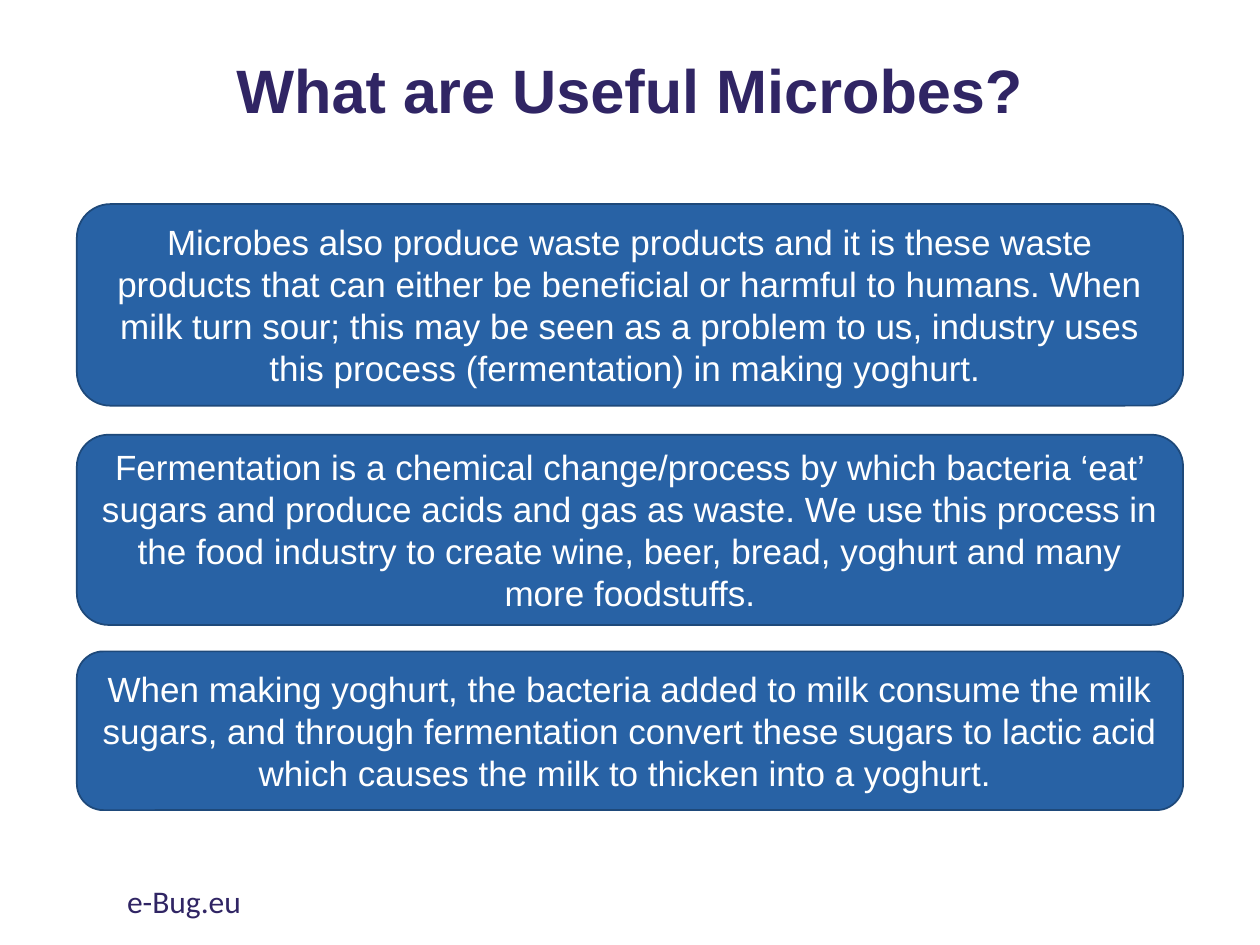
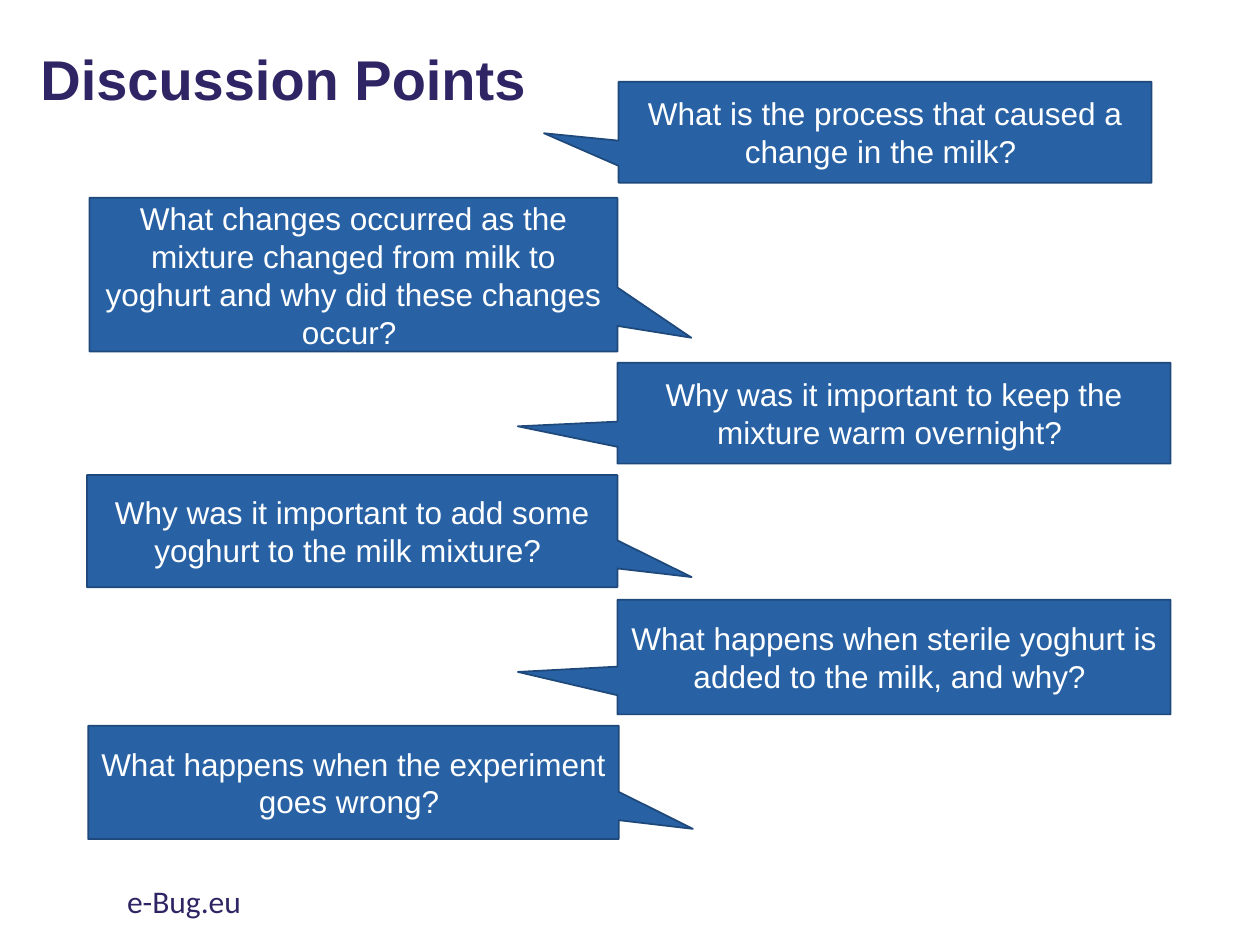
from pptx import Presentation
from pptx.dml.color import RGBColor
from pptx.enum.shapes import MSO_SHAPE
from pptx.enum.text import MSO_ANCHOR, MSO_AUTO_SIZE, PP_ALIGN
from pptx.util import Inches, Pt

NAVY, BLUE, EDGE, WHITE = "302564", "2862A5", "1E497A", "FFFFFF"


def colour(fmt, value):
    fmt.rgb = RGBColor.from_string(value)


def write(shape, text, size, value, align, anchor=MSO_ANCHOR.MIDDLE, font="Arial", bold=False):
    frame = shape.text_frame
    frame.word_wrap = True
    frame.auto_size = MSO_AUTO_SIZE.NONE
    frame.vertical_anchor = anchor
    frame.text = text
    paragraph = frame.paragraphs[0]
    paragraph.alignment = align
    paragraph.font.name = font
    paragraph.font.size = Pt(size)
    paragraph.font.bold = bold
    colour(paragraph.font.color, value)
    return paragraph


facts = [
    (1.62, 1.6, "Microbes also produce waste products and it is these waste products that can either be "
     "beneficial or harmful to humans. When milk turn sour; this may be seen as a problem to us, "
     "industry uses this process (fermentation) in making yoghurt. "),
    (3.45, 1.51, "Fermentation is a chemical change/process by which bacteria ‘eat’ sugars and produce "
     "acids and gas as waste. We use this process in the food industry to create wine, beer, bread, "
     "yoghurt and many more foodstuffs."),
    (5.17, 1.26, "When making yoghurt, the bacteria added to milk consume the milk sugars, and through "
     "fermentation convert these sugars to lactic acid which causes the milk to thicken into a yoghurt. "),
]

RIGHT_TAIL, LEFT_TAIL, FIRST_TAIL = (0.64, 0.41), (-0.68, 0.13), (-0.64, 0.01)
questions = [
    ((4.91, 0.65, 4.23, 0.8), FIRST_TAIL, "What is the process that caused a change in the milk? "),
    ((0.71, 1.57, 4.19, 1.22), RIGHT_TAIL, "What changes occurred as the mixture changed from milk "
     "to yoghurt and why did these changes occur? "),
    ((4.9, 2.88, 4.39, 0.8), LEFT_TAIL, "Why was it important to keep the mixture warm overnight? "),
    ((0.69, 3.77, 4.21, 0.89), RIGHT_TAIL, "Why was it important to add some yoghurt to the milk mixture? "),
    ((4.9, 4.76, 4.39, 0.91), LEFT_TAIL, "What happens when sterile yoghurt is added to the milk, and why? "),
    ((0.7, 5.76, 4.21, 0.9), RIGHT_TAIL, "What happens when the experiment goes wrong? "),
]

fact_panels = [
    (MSO_SHAPE.ROUNDED_RECTANGLE, (0.61, top, 8.78, height), (), text) for top, height, text in facts
]
question_panels = [(MSO_SHAPE.RECTANGULAR_CALLOUT, *question) for question in questions]

pages = [
    ("What are Useful Microbes?", (0.69, 0.29, 8.62, 0.91), 35, PP_ALIGN.CENTER, fact_panels, 20),
    ("Discussion Points", (0.22, -0.07, 4.23, 1.45), 32, PP_ALIGN.LEFT, question_panels, 18),
]

deck = Presentation()
deck.slide_width, deck.slide_height = Inches(10), Inches(7.5)

for heading, heading_box, heading_size, heading_align, panels, panel_size in pages:
    slide = deck.slides.add_slide(deck.slide_layouts[5])
    title = slide.shapes.title
    title.left, title.top, title.width, title.height = map(Inches, heading_box)
    write(title, heading, heading_size, NAVY, heading_align, bold=True).line_spacing = 0.9

    for kind, box, tail, text in panels:
        panel = slide.shapes.add_shape(kind, *map(Inches, box))
        for index, value in enumerate(tail):
            panel.adjustments[index] = value
        panel.shadow.inherit = False
        panel.fill.solid()
        colour(panel.fill.fore_color, BLUE)
        colour(panel.line.color, EDGE)
        panel.line.width = Pt(1)
        write(panel, text, panel_size, WHITE, PP_ALIGN.CENTER)

    footer = slide.shapes.add_textbox(*map(Inches, (0.91, 6.95, 3.38, 0.4)))
    write(footer, "e-Bug.eu", 18, NAVY, PP_ALIGN.LEFT, MSO_ANCHOR.TOP, "Calibri")

deck.save("out.pptx")
